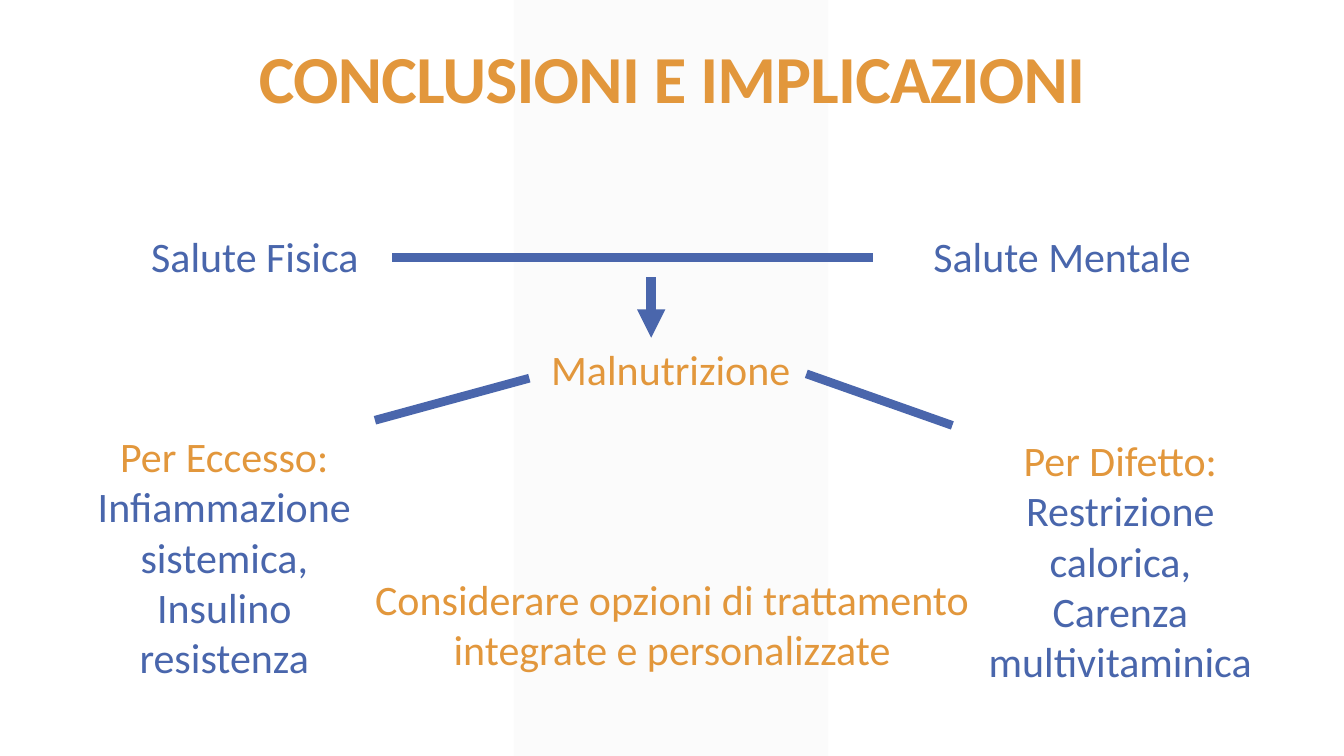
from lxml.etree import SubElement
from pptx import Presentation
from pptx.dml.color import RGBColor
from pptx.enum.shapes import MSO_CONNECTOR as Connector, MSO_SHAPE as Preset
from pptx.enum.text import MSO_AUTO_SIZE as AutoSize, PP_ALIGN as Align
from pptx.oxml.ns import qn
from pptx.util import Cm, Pt

ORANGE = RGBColor(0xE2, 0x97, 0x3C)
BLUE = RGBColor(0x49, 0x66, 0xAC)
LINE_BLUE = RGBColor(0x4A, 0x66, 0xAC)
PALE_GREY = RGBColor(0xF2, 0xF2, 0xF2)
WIDTH, HEIGHT = 33.87, 19.05


def add_band(slide, left, width, opacity):
    band = slide.shapes.add_shape(Preset.PARALLELOGRAM, Cm(left), 0, Cm(width), Cm(HEIGHT))
    band.adjustments[0] = 0
    band.shadow.inherit = False
    band.fill.solid()
    band.fill.fore_color.rgb = PALE_GREY
    band.line.fill.background()
    color = band.fill._xPr.find(".//" + qn("a:srgbClr"))
    SubElement(color, qn("a:alpha")).set("val", str(opacity * 1000))


def add_text(slide, left, top, width, height, parts, wrap=True, size=30):
    box = slide.shapes.add_textbox(Cm(left), Cm(top), Cm(width), Cm(height))
    frame = box.text_frame
    frame.word_wrap = wrap
    frame.auto_size = AutoSize.SHAPE_TO_FIT_TEXT
    paragraph = frame.paragraphs[0]
    paragraph.alignment = Align.CENTER if wrap else Align.LEFT
    paragraph.font.name = "Calibri"
    paragraph.font.size = Pt(size)
    for words, color in parts:
        run = paragraph.add_run()
        run.text = words
        run.font.color.rgb = color
    return box


def add_title(slide, words):
    title = add_text(slide, 2.33, 1.02, 29.21, 3.68, [(words, ORANGE)], size=48)
    title.text_frame.auto_size = AutoSize.NONE
    paragraph = title.text_frame.paragraphs[0]
    paragraph.line_spacing = 0.9
    paragraph.font.bold = True
    paragraph.runs[0].font._element.set("spc", "-50")


def add_link(slide, start, end, weight=6.25, arrow=False):
    ends = [Cm(value) for value in (*start, *end)]
    link = slide.shapes.add_connector(Connector.STRAIGHT, *ends)
    link.line.color.rgb = LINE_BLUE
    link.line.width = Pt(weight)
    if arrow:
        SubElement(link.line._get_or_add_ln(), qn("a:tailEnd")).set("type", "triangle")
    SubElement(link._element.spPr, qn("a:effectLst"))


def main():
    deck = Presentation()
    deck.slide_width, deck.slide_height = Cm(WIDTH), Cm(HEIGHT)
    slide = deck.slides.add_slide(deck.slide_layouts[6])

    add_band(slide, 12.95, 7.92, 30)
    add_title(slide, "CONCLUSIONI E IMPLICAZIONI")

    for left, top, width, words, color in (
        (3.56, 5.69, 5.79, "Salute Fisica", BLUE),
        (23.27, 5.69, 7.06, "Salute Mentale", BLUE),
        (13.64, 8.53, 6.6, "Malnutrizione", ORANGE),
    ):
        add_text(slide, left, top, width, 1.55, [(words, color)], wrap=False)

    for left, top, heading, effects in (
        (1.96, 10.72, "Per Eccesso: ", "Infiammazione sistemica, Insulino resistenza"),
        (24.54, 10.82, "Per Difetto: ", "Restrizione calorica, Carenza multivitaminica"),
    ):
        add_text(slide, left, top, 7.39, 6.68, [(heading, ORANGE), (effects, BLUE)])

    advice = "Considerare opzioni di trattamento integrate e personalizzate"
    add_text(slide, 8.05, 14.33, 17.78, 2.82, [(advice, ORANGE)])

    add_link(slide, (9.88, 6.48), (22, 6.48))
    add_link(slide, (16.41, 6.99), (16.41, 8.51), weight=6.75, arrow=True)
    add_link(slide, (13.34, 9.53), (9.45, 10.59))
    add_link(slide, (20.32, 9.42), (24, 10.72))

    deck.save("out.pptx")


if __name__ == "__main__":
    main()
